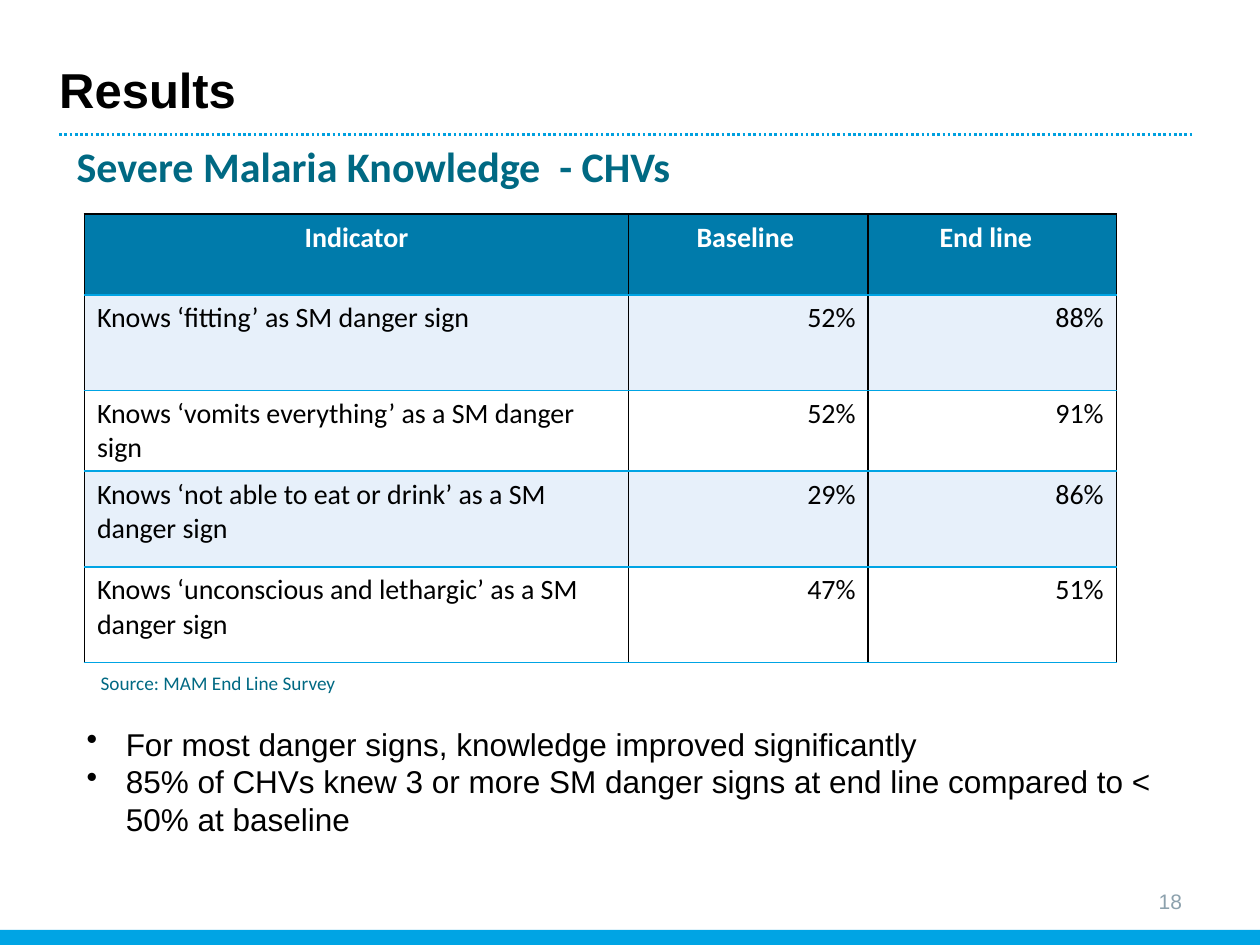
from lxml import etree
from pptx import Presentation
from pptx import util as u
from pptx.dml.color import RGBColor
from pptx.enum import dml, shapes, text
from pptx.oxml.ns import qn

LEFT, CENTER, RIGHT = text.PP_ALIGN.LEFT, text.PP_ALIGN.CENTER, text.PP_ALIGN.RIGHT
TOP, MIDDLE, BOTTOM = text.MSO_ANCHOR.TOP, text.MSO_ANCHOR.MIDDLE, text.MSO_ANCHOR.BOTTOM


def color(hex_string):
    return RGBColor.from_string(hex_string)


class SlideBuilder:
    BLACK, WHITE = "000000", "FFFFFF"
    BAR, RULE, GRID = "00A4E4", "00A0DF", "00A4E4"
    TEAL, HEADER, BAND, GREY = "006983", "007BAB", "E7F0FA", "8CA1AD"
    HEADING, BODY = "Arial", "Calibri"

    def __init__(self, slide):
        self.slide = slide

    def fill_paragraph(self, paragraph, words, size, font, hex_color,
                       bold=False, align=LEFT):
        paragraph.text = words
        paragraph.alignment = align
        paragraph.font.size = u.Pt(size)
        paragraph.font.name = font
        paragraph.font.bold = bold
        paragraph.font.color.rgb = color(hex_color)

    def bar(self, box, hex_color):
        shape = self.slide.shapes.add_shape(
            shapes.MSO_SHAPE.RECTANGLE, *map(u.Inches, box))
        shape.shadow.inherit = False
        shape.fill.solid()
        shape.fill.fore_color.rgb = color(hex_color)
        shape.line.fill.background()

    def dotted_rule(self, left, right, y):
        connector = self.slide.shapes.add_connector(
            shapes.MSO_CONNECTOR.STRAIGHT, *map(u.Inches, (left, y, right, y)))
        connector.line.color.rgb = color(self.RULE)
        connector.line.width = u.Pt(1.5)
        connector.line.dash_style = dml.MSO_LINE.ROUND_DOT
        etree.SubElement(connector._element.spPr, qn("a:effectLst"))

    def text_box(self, box, lines, size, font, hex_color, bold=False,
                 align=LEFT, anchor=TOP, side_inset=0.1, bullet_indent=None):
        frame = self.slide.shapes.add_textbox(*map(u.Inches, box)).text_frame
        frame.word_wrap = True
        frame.vertical_anchor = anchor
        frame.margin_left = frame.margin_right = u.Inches(side_inset)
        for index, words in enumerate(lines):
            paragraph = frame.add_paragraph() if index else frame.paragraphs[0]
            self.fill_paragraph(paragraph, words, size, font, hex_color, bold, align)
            if bullet_indent:
                self.bullet(paragraph, bullet_indent)

    def bullet(self, paragraph, indent):
        properties = paragraph._p.get_or_add_pPr()
        properties.set("marL", str(u.Inches(indent)))
        properties.set("indent", str(-u.Inches(indent)))
        mark = etree.Element(qn("a:buChar"), char="•")
        properties.insert(0, mark)

    def borders(self, cell, top):
        properties = cell._tc.get_or_add_tcPr()
        sides = {"lnL": self.BLACK, "lnR": self.BLACK, "lnT": top, "lnB": self.GRID}
        for index, (side, hex_color) in enumerate(sides.items()):
            line = etree.Element(qn(f"a:{side}"), w=str(u.Pt(1)))
            fill = etree.SubElement(line, qn("a:solidFill"))
            etree.SubElement(fill, qn("a:srgbClr"), val=hex_color)
            properties.insert(index, line)

    def table(self, left, top, widths, heights, rows):
        box = (left, top, sum(widths), sum(heights))
        table = self.slide.shapes.add_table(
            len(rows), len(widths), *map(u.Inches, box)).table
        for column, width in zip(table.columns, widths):
            column.width = u.Inches(width)
        for row_index, (row, height) in enumerate(zip(rows, heights)):
            table.rows[row_index].height = u.Inches(height)
            is_header = row_index == 0
            banded = self.BAND if row_index % 2 else self.WHITE
            for column_index, words in enumerate(row):
                cell = table.cell(row_index, column_index)
                cell.fill.solid()
                cell.fill.fore_color.rgb = color(self.HEADER if is_header else banded)
                align = CENTER if is_header else RIGHT if column_index else LEFT
                self.fill_paragraph(
                    cell.text_frame.paragraphs[0], words, 16, self.BODY,
                    self.WHITE if is_header else self.BLACK, is_header, align)
                self.borders(cell, self.BLACK if is_header else self.GRID)


def main():
    presentation = Presentation()
    presentation.slide_width = u.Inches(10)
    presentation.slide_height = u.Inches(7.5)
    builder = SlideBuilder(presentation.slides.add_slide(presentation.slide_layouts[6]))

    # Frame: bottom bar, title and rule
    builder.bar((0, 7.38, 10, 0.12), builder.BAR)
    builder.dotted_rule(0.47, 9.48, 1.07)
    builder.text_box((0.47, 0.39, 9.01, 0.63), ["Results"], 28, builder.HEADING,
                     builder.BLACK, bold=True, anchor=MIDDLE, side_inset=0)
    builder.text_box((7.15, 6.95, 2.33, 0.4), ["18"], 12, builder.HEADING,
                     builder.GREY, align=RIGHT, anchor=MIDDLE)

    # Findings
    builder.text_box((0.59, 4.93, 9.06, 1.77), [
        "For most danger signs, knowledge improved significantly",
        "85% of CHVs knew 3 or more SM danger signs at end line compared to < 50% at baseline",
    ], 18, builder.HEADING, builder.BLACK, anchor=BOTTOM, bullet_indent=0.31)

    # Knowledge table with its heading and source
    builder.table(0.67, 1.7, (4.32, 1.9, 1.97), (0.64, 0.76, 0.64, 0.76, 0.76), [
        ("Indicator", "Baseline ", "End line  "),
        ("Knows ‘fitting’ as SM danger sign", "52%", "88%"),
        ("Knows ‘vomits everything’ as a SM danger sign", "52%", "91%"),
        ("Knows ‘not able to eat or drink’ as a SM danger sign", "29%", "86%"),
        ("Knows ‘unconscious and lethargic’ as a SM danger sign", "47%", "51%"),
    ])
    builder.text_box((0.7, 5.28, 4.88, 0.29), ["Source: MAM End Line Survey"],
                     11, builder.BODY, builder.TEAL)
    builder.text_box((0.51, 1.07, 5.28, 0.5), ["Severe Malaria Knowledge  - CHVs"],
                     24, builder.BODY, builder.TEAL, bold=True)

    presentation.save("out.pptx")


if __name__ == "__main__":
    main()
